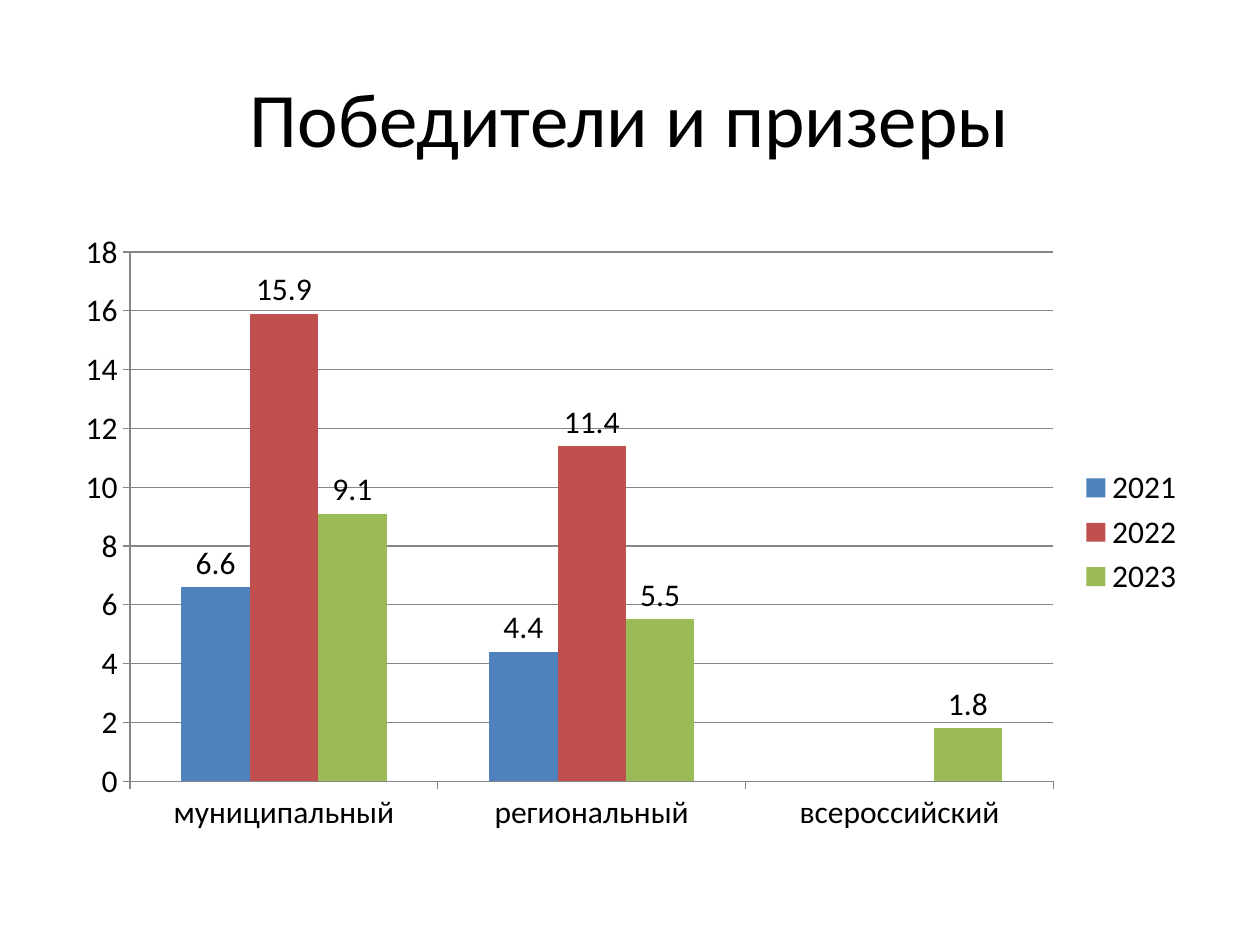
from pptx import Presentation
from pptx.chart.data import CategoryChartData
from pptx.dml.color import RGBColor
from pptx.enum.chart import (XL_CHART_TYPE as ChartType, XL_LABEL_POSITION as LabelPosition,
                             XL_LEGEND_POSITION as LegendPosition, XL_TICK_MARK as TickMark)
from pptx.enum.text import MSO_ANCHOR as Anchor, PP_ALIGN as Align
from pptx.util import Inches, Pt

FONT = "Calibri"
COLORS = {"text": "000000", "line": "868686",
          "2021": "4F81BD", "2022": "C0504D", "2023": "9BBB59"}
LEVELS = ["муниципальный", "региональный", "всероссийский"]
WINNERS = {"2021": [6.6, 4.4, None], "2022": [15.9, 11.4, None], "2023": [9.1, 5.5, 1.8]}
LARGE_LABEL_YEAR = "2022"
TITLE_BOX = [Inches(length) for length in (0.5, 0.3, 9, 1.25)]
CHART_BOX = [Inches(length) for length in (0.5, 1.75, 9, 4.95)]


def color(name):
    return RGBColor.from_string(COLORS[name])


def format_font(font, size):
    font.name = FONT
    font.size = Pt(size)
    font.color.rgb = color("text")


def add_title(slide, box, text, size=44):
    title = slide.shapes.title
    title.left, title.top, title.width, title.height = box
    title.text_frame.text = text
    title.text_frame.vertical_anchor = Anchor.MIDDLE
    paragraph = title.text_frame.paragraphs[0]
    paragraph.alignment = Align.CENTER
    format_font(paragraph.runs[0].font, size)


def format_axes(chart):
    value_axis = chart.value_axis
    value_axis.minimum_scale, value_axis.maximum_scale = 0, 18
    value_axis.major_unit = 2
    value_axis.has_major_gridlines = True
    for axis in (chart.category_axis, value_axis):
        axis.major_tick_mark = TickMark.OUTSIDE
    for line in (chart.category_axis.format.line, value_axis.format.line,
                 value_axis.major_gridlines.format.line):
        line.color.rgb = color("line")
        line.width = Pt(0.75)


def label_series(series, values, size):
    """Label the whole series in the chart font, or only its filled points in the default one."""
    if series.name == LARGE_LABEL_YEAR:
        labels = series.data_labels
        labels.show_value = True
        labels.position = LabelPosition.OUTSIDE_END
        format_font(labels.font, size)
        return
    for index, value in enumerate(values):
        if value is not None:
            series.points[index].data_label.position = LabelPosition.OUTSIDE_END


def add_winners_chart(slide, box, size=18):
    data = CategoryChartData()
    data.categories = LEVELS
    for year, values in WINNERS.items():
        data.add_series(year, values)
    chart = slide.shapes.add_chart(ChartType.COLUMN_CLUSTERED, *box, data).chart
    format_font(chart.font, size)
    chart.has_title = False
    chart.has_legend = True
    chart.legend.position = LegendPosition.RIGHT
    chart.legend.include_in_layout = False
    format_axes(chart)

    plot = chart.plots[0]
    plot.gap_width = 150
    plot.overlap = 0
    plot.vary_by_categories = False
    for series in plot.series:
        series.format.fill.solid()
        series.format.fill.fore_color.rgb = color(series.name)
        label_series(series, WINNERS[series.name], size)


def main():
    presentation = Presentation()
    presentation.slide_width, presentation.slide_height = Inches(10), Inches(7.5)
    slide = presentation.slides.add_slide(presentation.slide_layouts.get_by_name("Title Only"))
    add_title(slide, TITLE_BOX, "Победители и призеры")
    add_winners_chart(slide, CHART_BOX)
    presentation.save("out.pptx")


if __name__ == "__main__":
    main()
